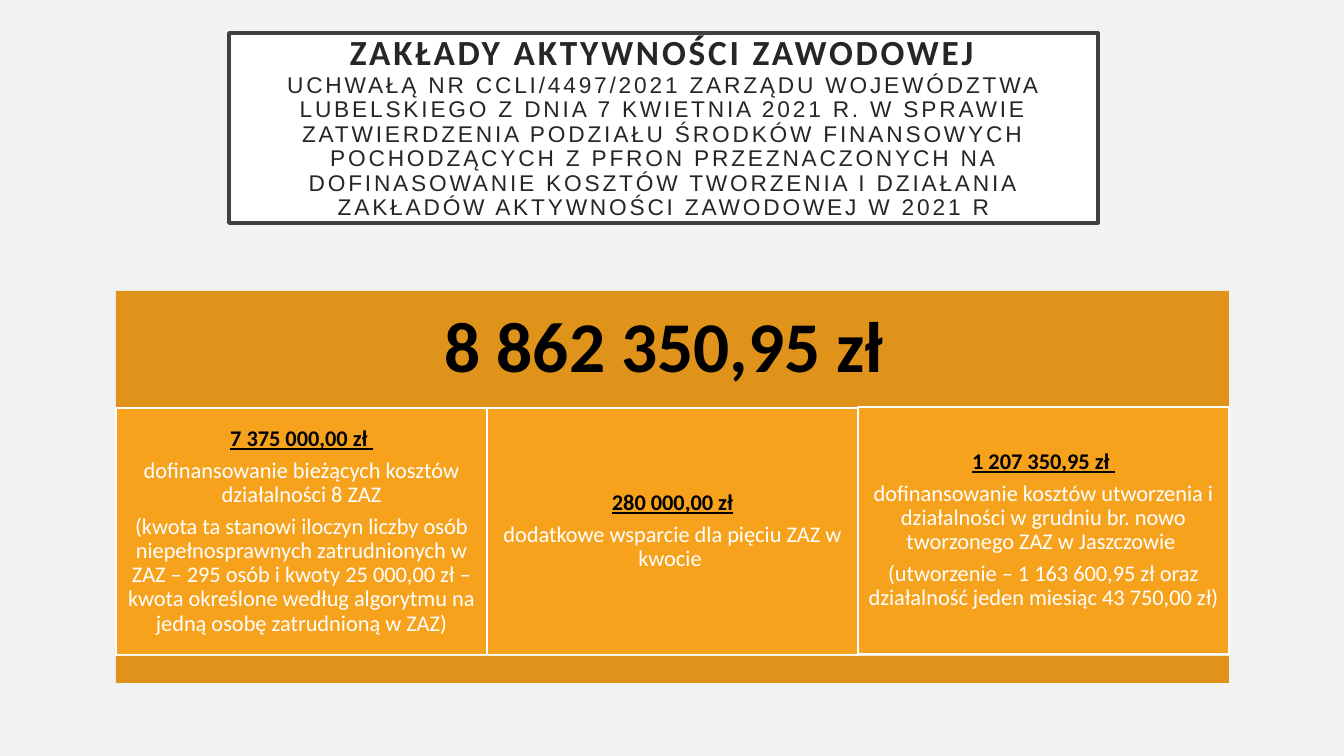
from lxml import etree
from pptx import Presentation
from pptx.dml.color import RGBColor
from pptx.enum.shapes import MSO_SHAPE
from pptx.enum.text import MSO_ANCHOR, MSO_AUTO_SIZE, PP_ALIGN
from pptx.oxml.ns import qn
from pptx.util import Emu, Pt

RECTANGLE = MSO_SHAPE.RECTANGLE
MIDDLE = MSO_ANCHOR.MIDDLE
NO_AUTOFIT = MSO_AUTO_SIZE.NONE
CENTER = PP_ALIGN.CENTER

EMU_PER_PX = 914400 / 100.8
TITLE_ONLY = 5
COLORS = {
    "page": "F2F2F2",
    "white": "FFFFFF",
    "black": "000000",
    "title_line": "404040",
    "title_text": "262626",
    "band": "DF931A",
    "column": "F6A21D",
}

# Table-like block: left edge, column width, column height
BLOCK_LEFT, COLUMN_WIDTH, COLUMN_HEIGHT = 116, 371, 247
BLOCK_WIDTH = 3 * COLUMN_WIDTH

TITLE = "ZAKŁADY AKTYWNOŚCI ZAWODOWEJ"
RESOLUTION = (
    "UCHWAŁĄ NR CCLI/4497/2021 ZARZĄDU WOJEWÓDZTWA LUBELSKIEGO Z DNIA 7 KWIETNIA "
    "2021 R. W SPRAWIE ZATWIERDZENIA PODZIAŁU ŚRODKÓW FINANSOWYCH POCHODZĄCYCH "
    "Z PFRON PRZEZNACZONYCH NA DOFINASOWANIE KOSZTÓW TWORZENIA I DZIAŁANIA "
    "ZAKŁADÓW AKTYWNOŚCI ZAWODOWEJ W 2021 R"
)
TOTAL = "8 862 350,95 zł "

# Top of the column, amount, explanations
COLUMNS = [
    (408, "7 375 000,00 zł ", [
        "dofinansowanie bieżących kosztów działalności 8 ZAZ",
        "(kwota ta stanowi iloczyn liczby osób niepełnosprawnych zatrudnionych w ZAZ "
        "– 295 osób i kwoty 25 000,00 zł – kwota określone według algorytmu na jedną "
        "osobę zatrudnioną w ZAZ)",
    ]),
    (408, "280 000,00 zł", ["dodatkowe wsparcie dla pięciu ZAZ w kwocie "]),
    (407, "1 207 350,95 zł ", [
        "dofinansowanie kosztów utworzenia i działalności w grudniu br. nowo "
        "tworzonego ZAZ w Jaszczowie ",
        "(utworzenie – 1 163 600,95 zł oraz działalność jeden miesiąc 43 750,00 zł)",
    ]),
]


def px(length):
    return Emu(round(length * EMU_PER_PX))


def color(name):
    return RGBColor.from_string(COLORS[name])


def paint(box, fill, line=None, line_width=1):
    box.fill.solid()
    box.fill.fore_color.rgb = color(fill)
    if line:
        box.line.color.rgb = color(line)
        box.line.width = Pt(line_width)
    else:
        box.line.fill.background()


def set_frame(box, inset):
    frame = box.text_frame
    frame.word_wrap = True
    frame.auto_size = NO_AUTOFIT
    frame.vertical_anchor = MIDDLE
    frame.margin_left = frame.margin_right = px(inset)
    frame.margin_top = frame.margin_bottom = px(inset)
    return frame


def format_para(para, space_after=0):
    para.alignment = CENTER
    para.line_spacing = 0.9
    para.space_before = Pt(0)
    para.space_after = Pt(space_after)


def add_span(para, text, size, ink, font="Calibri", bold=False, underline=False):
    span = para.add_run()
    span.text = text
    span.font.name = font
    span.font.size = Pt(size)
    span.font.bold = bold
    span.font.underline = underline
    span.font.color.rgb = color(ink)
    return span


def add_box(page, left, top, width, height, fill, line=None):
    box = page.shapes.add_shape(RECTANGLE, px(left), px(top), px(width), px(height))
    box.shadow.inherit = False
    paint(box, fill, line)
    return box


def add_title(page):
    box = page.shapes.title
    box.left, box.top, box.width, box.height = px(229), px(33), px(869), px(190)
    paint(box, "white", "title_line", 2.5)
    para = set_frame(box, 20).paragraphs[0]
    format_para(para)
    heading = add_span(para, TITLE, 25.2, "title_text", bold=True)
    para.add_line_break()
    # The break takes the heading's size, so the first line stays low
    line_break = para._p.find(qn("a:br"))
    etree.SubElement(line_break, qn("a:rPr")).set("sz", "2520")
    resolution = add_span(para, RESOLUTION, 16.2, "title_text", font="Arial")
    for span in (heading, resolution):
        span.font._element.set("spc", "200")


def add_total(page):
    box = add_box(page, BLOCK_LEFT, 291, BLOCK_WIDTH, 117, "band")
    para = set_frame(box, 21).paragraphs[0]
    format_para(para, 17.85)
    add_span(para, TOTAL, 51, "black", bold=True)


def add_column(page, index, top, amount, explanations):
    left = BLOCK_LEFT + index * COLUMN_WIDTH
    box = add_box(page, left, top, COLUMN_WIDTH, COLUMN_HEIGHT, "column", "white")
    frame = set_frame(box, 7)
    para = frame.paragraphs[0]
    format_para(para, 5.6)
    add_span(para, amount, 16, "black", bold=True, underline=True)
    for explanation in explanations:
        para = frame.add_paragraph()
        format_para(para, 5.6)
        add_span(para, explanation, 16, "white")


def main():
    deck = Presentation()
    deck.slide_width, deck.slide_height = px(1344), px(756)
    page = deck.slides.add_slide(deck.slide_layouts[TITLE_ONLY])
    page.background.fill.solid()
    page.background.fill.fore_color.rgb = color("page")

    add_title(page)
    add_total(page)
    for index, (top, amount, explanations) in enumerate(COLUMNS):
        add_column(page, index, top, amount, explanations)
    # Closing band
    add_box(page, BLOCK_LEFT, 656, BLOCK_WIDTH, 27, "band")

    deck.save("out.pptx")


if __name__ == "__main__":
    main()
